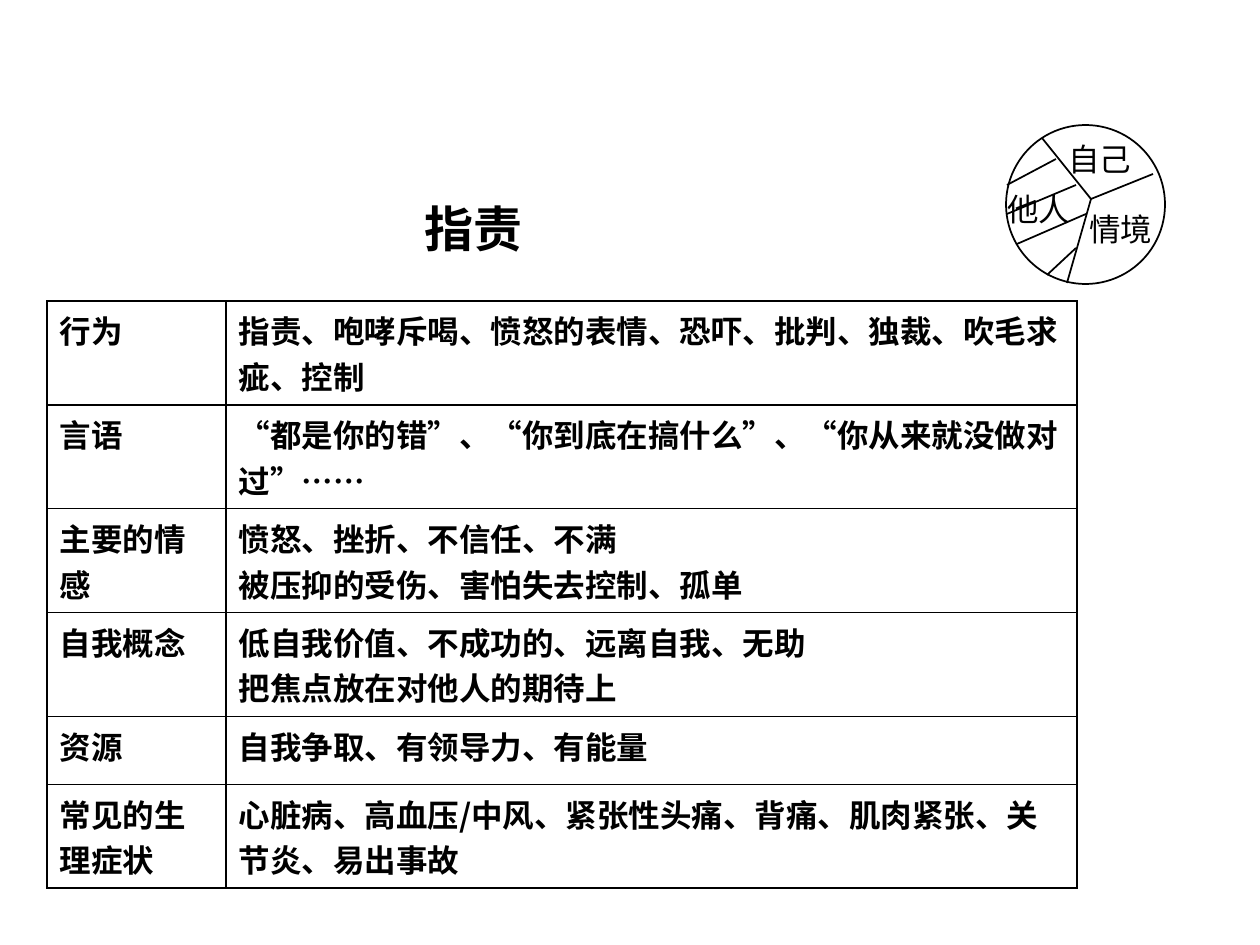
import pptx
import pptx.dml.color
import pptx.enum.shapes
import pptx.enum.text
import pptx.oxml.ns
import pptx.util
from dataclasses import dataclass
from lxml import etree

SCALE = 914400 / 126  # EMU in one px
qn = pptx.oxml.ns.qn


@dataclass(frozen=True)
class Theme:
    ink: str = "000000"
    paper: str = "FFFFFF"
    font: str = "Noto Sans CJK SC"
    title_size: int = 28
    body_size: int = 18
    line_width: int = 1


@dataclass(frozen=True)
class Label:
    text: str
    left: int
    top: int
    width: int
    height: int
    size: int
    bold: bool = False


@dataclass(frozen=True)
class Stroke:
    x1: int
    y1: int
    x2: int
    y2: int


@dataclass(frozen=True)
class Aspect:
    name: str
    lines: tuple[str, ...]


THEME = Theme()
TITLE = Label("指责", 412, 192, 125, 72, THEME.title_size, True)

TABLE_LEFT, TABLE_TOP, ROW_HEIGHT = 47, 301, 68
COLUMN_WIDTHS = (179, 851)
ASPECTS = (
    Aspect("行为", ("指责、咆哮斥喝、愤怒的表情、恐吓、批判、独裁、吹毛求疵、控制",)),
    Aspect("言语", ("“都是你的错”、“你到底在搞什么”、“你从来就没做对过”……",)),
    Aspect("主要的情感", ("愤怒、挫折、不信任、不满", "被压抑的受伤、害怕失去控制、孤单")),
    Aspect("自我概念", ("低自我价值、不成功的、远离自我、无助", "把焦点放在对他人的期待上")),
    Aspect("资源", ("自我争取、有领导力、有能量",)),
    Aspect("常见的生理症状", ("心脏病、高血压/中风、紧张性头痛、背痛、肌肉紧张、关节炎、易出事故",)),
)

CIRCLE_LEFT, CIRCLE_TOP, CIRCLE_SIZE = 1006, 125, 159
DIVIDERS = (
    Stroke(1042, 138, 1091, 199),
    Stroke(1091, 199, 1067, 283),
    Stroke(1153, 174, 1091, 199),
)
SECTORS = tuple(
    Label(text, left, top, 89, 50, THEME.body_size)
    for text, left, top in (("自己", 1056, 134), ("他人", 995, 184), ("情境", 1077, 204))
)
HATCHING = (
    Stroke(1056, 159, 1007, 185),
    Stroke(1076, 185, 1007, 214),
    Stroke(1086, 214, 1017, 244),
    Stroke(1076, 248, 1047, 275),
)


def px(value: int) -> int:
    return round(value * SCALE)


def colour(value: str) -> pptx.dml.color.RGBColor:
    return pptx.dml.color.RGBColor.from_string(value)


def add_span(para, text: str, size: int, bold: bool) -> None:
    span = para.add_run()
    span.text = text
    span.font.size = pptx.util.Pt(size)
    span.font.bold = bold
    span.font.color.rgb = colour(THEME.ink)
    span.font.name = THEME.font
    east_asian = etree.SubElement(span.font._element, qn("a:ea"))
    east_asian.set("typeface", THEME.font)


def add_label(shapes, label: Label) -> None:
    box = shapes.add_textbox(px(label.left), px(label.top), px(label.width), px(label.height))
    box.text_frame.word_wrap = False
    box.text_frame.auto_size = pptx.enum.text.MSO_AUTO_SIZE.SHAPE_TO_FIT_TEXT
    add_span(box.text_frame.paragraphs[0], label.text, label.size, label.bold)


def style_line(line) -> None:
    line.color.rgb = colour(THEME.ink)
    line.width = pptx.util.Pt(THEME.line_width)


def add_stroke(shapes, stroke: Stroke) -> None:
    connector = shapes.add_connector(
        pptx.enum.shapes.MSO_CONNECTOR.STRAIGHT,
        px(stroke.x1), px(stroke.y1), px(stroke.x2), px(stroke.y2),
    )
    style_line(connector.line)
    etree.SubElement(connector._element.spPr, qn("a:effectLst"))


def fill_cell(cell, lines: tuple[str, ...]) -> None:
    properties = cell._tc.get_or_add_tcPr()
    for side in ("a:lnL", "a:lnR", "a:lnT", "a:lnB"):
        border = etree.SubElement(properties, qn(side))
        border.set("w", str(pptx.util.Pt(THEME.line_width)))
        fill = etree.SubElement(border, qn("a:solidFill"))
        etree.SubElement(fill, qn("a:srgbClr")).set("val", THEME.ink)
    cell.fill.solid()
    cell.fill.fore_color.rgb = colour(THEME.paper)
    frame = cell.text_frame
    for index, line in enumerate(lines):
        para = frame.add_paragraph() if index else frame.paragraphs[0]
        add_span(para, line, THEME.body_size, True)


def add_aspect_table(shapes) -> None:
    table = shapes.add_table(
        len(ASPECTS), len(COLUMN_WIDTHS), px(TABLE_LEFT), px(TABLE_TOP),
        px(sum(COLUMN_WIDTHS)), px(ROW_HEIGHT * len(ASPECTS)),
    ).table
    table.first_row = table.horz_banding = False
    for column, width in zip(table.columns, COLUMN_WIDTHS):
        column.width = px(width)
    for index, aspect in enumerate(ASPECTS):
        table.rows[index].height = px(ROW_HEIGHT)
        fill_cell(table.cell(index, 0), (aspect.name,))
        fill_cell(table.cell(index, 1), aspect.lines)


def add_circle_diagram(shapes) -> None:
    parts = shapes.add_group_shape().shapes
    circle = parts.add_shape(
        pptx.enum.shapes.MSO_SHAPE.OVAL,
        px(CIRCLE_LEFT), px(CIRCLE_TOP), px(CIRCLE_SIZE), px(CIRCLE_SIZE),
    )
    circle.shadow.inherit = False
    circle.fill.background()
    style_line(circle.line)
    for divider in DIVIDERS:
        add_stroke(parts, divider)
    for sector in SECTORS:
        add_label(parts, sector)
    for hatch in HATCHING:
        add_stroke(parts, hatch)


def main() -> None:
    deck = pptx.Presentation()
    deck.slide_width, deck.slide_height = px(1260), px(945)
    page = deck.slides.add_slide(deck.slide_layouts[6])

    # Table of aspects, heading, then the divided circle
    add_aspect_table(page.shapes)
    add_label(page.shapes, TITLE)
    add_circle_diagram(page.shapes)

    deck.save("out.pptx")


if __name__ == "__main__":
    main()
